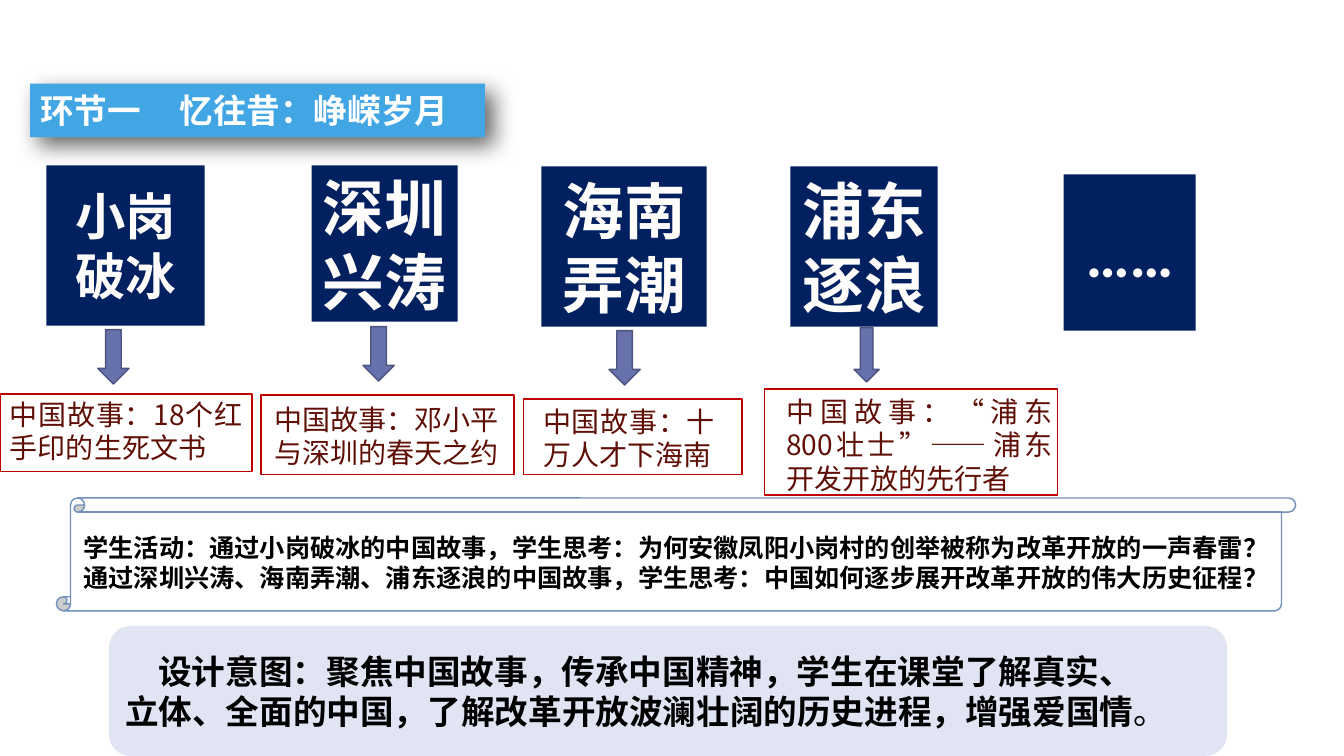
from lxml.etree import SubElement
from pptx import Presentation
from pptx.dml.color import RGBColor
from pptx.enum.shapes import MSO_SHAPE
from pptx.enum.text import MSO_ANCHOR, MSO_AUTO_SIZE, PP_ALIGN
from pptx.oxml import parse_xml
from pptx.oxml.ns import nsdecls, qn
from pptx.util import Pt

PX = 9144
CJK = "Noto Sans CJK SC"
NAVY, CREAM, RED, MAROON = "002060", "FFFDFB", "C00000", "5F0F05"

STATIONS = [
    (["小岗", "破冰"], 36, (46, 164, 157, 159), (97, 327, 31, 54),
     (0, 391, 250, 77), (0, 389, 250, 77), ["中国故事：18个红手印的生死文书"]),
    (["深圳", "兴涛"], 44, (309, 164, 145, 155), (360, 324, 31, 54),
     (259, 392, 251, 79), (262, 394, 273, 77), ["中国故事：邓小平", "与深圳的春天之约"]),
    (["海南", "弄潮"], 44, (537, 165, 164, 159), (604, 328, 31, 54),
     (519, 396, 217, 75), (529, 396, 190, 77), ["中国故事：十万人才下海南"]),
    (["浦东", "逐浪"], 44, (784, 165, 146, 159), (847, 325, 25, 54),
     (758, 386, 291, 105), (770, 386, 284, 111),
     ["中国故事：“浦东800壮士”——浦东开发开放的先行者"]),
]


def px(n):
    """Turn px into EMU."""
    return int(n * PX)


def rgb(value):
    """Turn a hex string into a colour."""
    return RGBColor.from_string(value)


def add_run(p, text, size, color, bold=False, font=CJK):
    """Add a formatted run, with the Chinese font set for East Asian text."""
    r = p.add_run()
    r.text = text
    for name, value in {"size": Pt(size), "bold": bold, "name": font}.items():
        setattr(r.font, name, value)
    r.font.color.rgb = rgb(color)
    SubElement(r.font._element, qn("a:ea")).set("typeface", CJK)
    return r


def write(s, lines, size, color, bold=False, font=CJK, align=PP_ALIGN.LEFT,
          anchor=MSO_ANCHOR.MIDDLE):
    """Write one paragraph for each line into a shape."""
    tf = s.text_frame
    for name, value in {"word_wrap": True, "vertical_anchor": anchor,
                        "auto_size": MSO_AUTO_SIZE.NONE}.items():
        setattr(tf, name, value)
    for i, line in enumerate(lines):
        p = tf.add_paragraph() if i else tf.paragraphs[0]
        p.alignment = align
        add_run(p, line, size, color, bold, font)
    return tf


def paint(s, fill=None, line=None):
    """Set fill and outline, leaving out whichever is not given."""
    if fill:
        s.fill.solid()
        s.fill.fore_color.rgb = rgb(fill)
    else:
        s.fill.background()
    if line:
        s.line.color.rgb = rgb(line)
        s.line.width = Pt(1)
    else:
        s.line.fill.background()


def add_shape(slide, kind, box, fill=None, line=None):
    """Add a flat preset shape."""
    s = slide.shapes.add_shape(kind, *map(px, box))
    s.shadow.inherit = False
    paint(s, fill, line)
    return s


def add_text(slide, box, lines, *style, **options):
    """Add a wrapping text box anchored at the top."""
    s = slide.shapes.add_textbox(*map(px, box))
    return write(s, lines, *style, anchor=MSO_ANCHOR.TOP, **options)


def add_title(slide, box):
    """Shape the title placeholder as a rounded banner with a shadow."""
    s = slide.shapes.title
    for name, value in zip(("left", "top", "width", "height"), box):
        setattr(s, name, px(value))
    paint(s, "42A6E4")
    props = s._element.spPr
    props.insert(1, parse_xml(
        f'<a:prstGeom {nsdecls("a")} prst="roundRect"><a:avLst/></a:prstGeom>'))
    props.append(parse_xml(
        f'<a:effectLst {nsdecls("a")}><a:outerShdw blurRad="{Pt(16)}" dist="{Pt(8)}" '
        'dir="2700000" algn="tl" rotWithShape="0"><a:srgbClr val="000000">'
        '<a:alpha val="60000"/></a:srgbClr></a:outerShdw></a:effectLst>'))
    tf = write(s, ["环节一\t忆往昔：峥嵘岁月"], 24, "FFFFFF", True)
    tabs = SubElement(tf.paragraphs[0]._p.get_or_add_pPr(), qn("a:tabLst"))
    tab = SubElement(tabs, qn("a:tab"))
    tab.set("pos", str(px(138)))
    tab.set("algn", "l")


def add_place(slide, box, lines, size):
    """Add a navy square naming a place."""
    s = add_shape(slide, MSO_SHAPE.RECTANGLE, box, NAVY)
    write(s, lines, size, CREAM, True, "Calibri", PP_ALIGN.CENTER)


def add_station(slide, lines, size, square, arrow, frame, text, story):
    """Add a place, its arrow and its framed story."""
    add_place(slide, square, lines, size)
    add_shape(slide, MSO_SHAPE.DOWN_ARROW, arrow, "6771AB", "4C547F")
    add_text(slide, text, story, 20, MAROON, align=PP_ALIGN.JUSTIFY)
    add_shape(slide, MSO_SHAPE.RECTANGLE, frame, line=RED)


def add_activity(slide, box):
    """Add the scroll holding the student activity."""
    x, y, w, h = box
    add_shape(slide, MSO_SHAPE.VERTICAL_SCROLL, box, "FFFFFF", "7190BB")
    add_text(slide, (x + 17, y + 29, w - 14, h - 41), [
        "学生活动：通过小岗破冰的中国故事，学生思考：为何安徽凤阳小岗村的创举被称为改革开放的一声春雷？",
        "通过深圳兴涛、海南弄潮、浦东逐浪的中国故事，学生思考：中国如何逐步展开改革开放的伟大历史征程？",
    ], 18, "000000", True, "Arial")


def add_intent(slide, box):
    """Add the rounded panel with the design intent."""
    s = add_shape(slide, MSO_SHAPE.ROUNDED_RECTANGLE, box, "E1E4F2")
    tf = write(s, ["设计意图：聚焦中国故事，传承中国精神，学生在课堂了解真实、",
                   "立体、全面的中国，了解改革开放波澜壮阔的历史进程，增强爱国情"],
               24, "000000", True)
    first, last = tf.paragraphs
    first._p.get_or_add_pPr().set("indent", str(px(33)))
    add_run(last, "。", 24, "000000")


def main():
    """Build and save the slide."""
    prs = Presentation()
    prs.slide_width, prs.slide_height = px(1333), px(750)
    slide = prs.slides.add_slide(prs.slide_layouts[5])
    add_title(slide, (30, 83, 451, 53))
    for station in STATIONS:
        add_station(slide, *station)
    add_place(slide, (1055, 173, 131, 155), ["……"], 44)
    add_intent(slide, (108, 621, 1109, 129))
    add_activity(slide, (56, 494, 1229, 112))
    prs.save("out.pptx")


if __name__ == "__main__":
    main()
